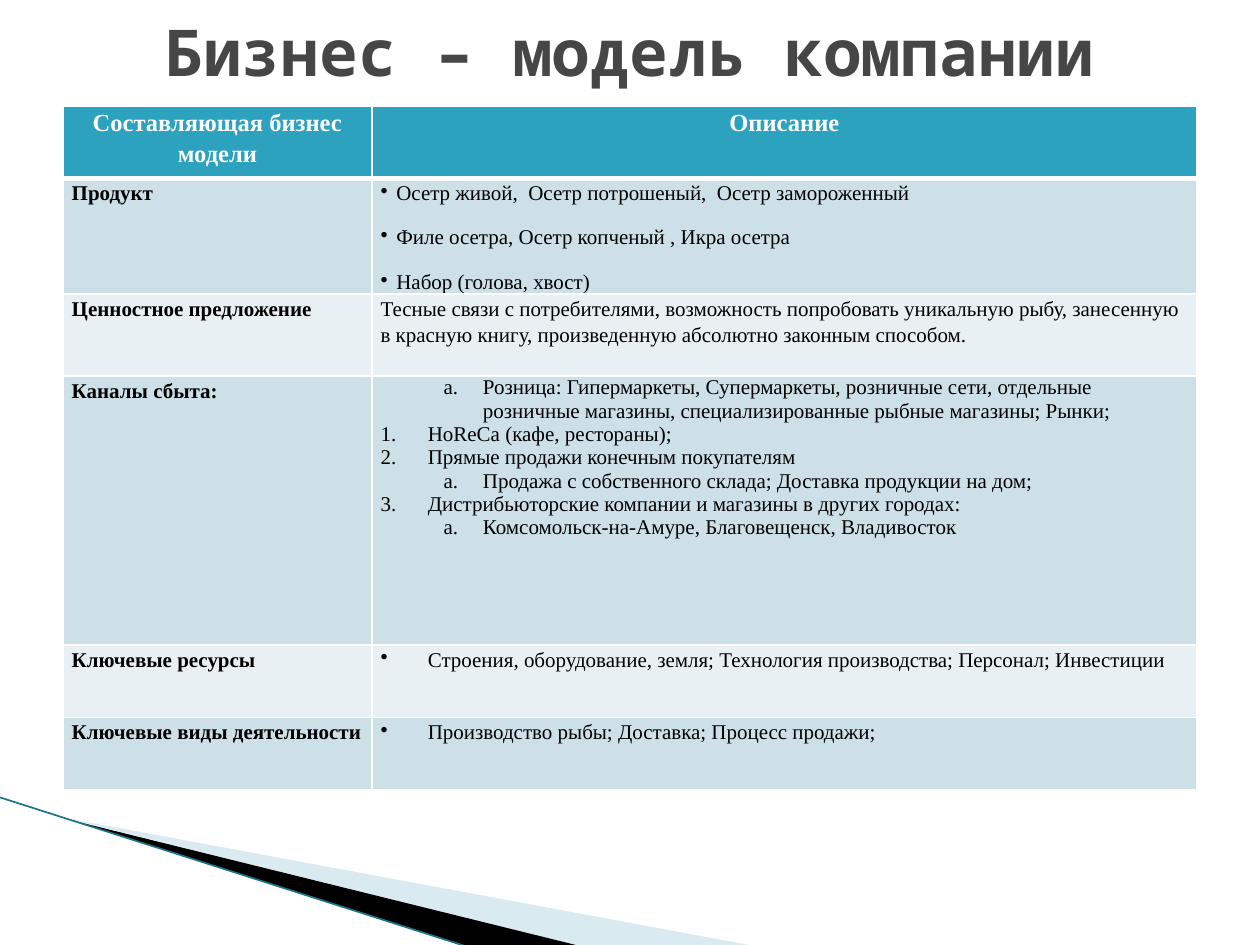
from dataclasses import dataclass

from lxml.etree import SubElement
from pptx import Presentation
from pptx.dml.color import RGBColor
from pptx.enum.shapes import MSO_CONNECTOR
from pptx.enum.text import MSO_ANCHOR, MSO_AUTO_SIZE, PP_ALIGN
from pptx.oxml.ns import qn
from pptx.util import Pt


@dataclass(frozen=True)
class Theme:
    title_font: str = "Noto Sans Mono"
    body_font: str = "Times New Roman"
    title_size: float = 36.9
    header_size: float = 14
    body_size: float = 12
    title: str = "464646"
    white: str = "FFFFFF"
    black: str = "000000"
    header: str = "2DA2BF"
    band_dark: str = "CDE0E8"
    band_light: str = "E8F0F4"
    wedge: str = "A0CBDC"
    edge: str = "1B7587"


@dataclass(frozen=True)
class ListStyle:
    tag: str
    attribute: str
    value: str
    left: float
    hanging: float
    level: int = 0
    line_spacing: float = 1.0
    space_after: float = 0


THEME = Theme()
PLAIN = None
PRODUCT = ListStyle("a:buChar", "char", "•", 9, 9, line_spacing=1.15, space_after=10)
BULLET = ListStyle("a:buChar", "char", "•", 27, 27, line_spacing=1.15)
NUMBER = ListStyle("a:buAutoNum", "type", "arabicPeriod", 27, 27)
LETTER = ListStyle("a:buAutoNum", "type", "alphaLcPeriod", 58.5, 22.5, level=1)

TITLE = "Бизнес – модель компании"
HEADERS = ("Составляющая бизнес модели", "Описание")
COLUMN_WIDTHS = (176.5, 471.5)
ROW_HEIGHTS = (41.5, 66, 47, 153.5, 41.5, 41.5)
ROWS = (
    ("Продукт", (
        (PRODUCT, "Осетр живой,  Осетр потрошеный,  Осетр замороженный"),
        (PRODUCT, "Филе осетра, Осетр копченый , Икра осетра"),
        (PRODUCT, "Набор (голова, хвост)"))),
    ("Ценностное предложение", (
        (PLAIN, "Тесные связи с потребителями, возможность попробовать уникальную рыбу, "
                "занесенную в красную книгу, произведенную абсолютно законным способом."),)),
    ("Каналы сбыта:", (
        (LETTER, "Розница: Гипермаркеты, Супермаркеты, розничные сети, отдельные розничные "
                 "магазины, специализированные рыбные магазины; Рынки;"),
        (NUMBER, "HoReCa (кафе, рестораны);"),
        (NUMBER, "Прямые продажи конечным покупателям"),
        (LETTER, "Продажа с собственного склада; Доставка продукции на дом;"),
        (NUMBER, "Дистрибьюторские компании и магазины в других городах:"),
        (LETTER, "Комсомольск-на-Амуре, Благовещенск, Владивосток"))),
    ("Ключевые ресурсы", (
        (BULLET, "Строения, оборудование, земля; Технология производства; Персонал; Инвестиции"),)),
    ("Ключевые виды деятельности", (
        (BULLET, "Производство рыбы; Доставка; Процесс продажи;"),)),
)


def color(value):
    return RGBColor.from_string(value)


def format_runs(paragraph, font_name, size, text_color, bold):
    for run in paragraph.runs:
        run.font.name = font_name
        run.font.size = Pt(size)
        run.font.bold = bold
        run.font.color.rgb = color(text_color)


def add_wedge(slide, points, fill_color, opacity=100):
    builder = slide.shapes.build_freeform(*points[0], scale=Pt(1))
    builder.add_line_segments(points[1:], close=True)
    shape = builder.convert_to_shape()
    shape.shadow.inherit = False
    shape.line.fill.background()
    shape.fill.solid()
    shape.fill.fore_color.rgb = color(fill_color)
    if opacity < 100:
        srgb = shape.fill._xPr.find(qn("a:solidFill")).find(qn("a:srgbClr"))
        SubElement(srgb, qn("a:alpha"), val=str(opacity * 1000))


def add_edge_line(slide, start, end):
    points = [Pt(value) for value in (*start, *end)]
    connector = slide.shapes.add_connector(MSO_CONNECTOR.STRAIGHT, *points)
    connector.line.color.rgb = color(THEME.edge)
    connector.line.width = Pt(0.95)
    SubElement(connector._element.spPr, qn("a:effectLst"))


def set_title(slide):
    title = slide.shapes.title
    title.left, title.top, title.width, title.height = Pt(36), Pt(9.5), Pt(648), Pt(39.5)
    frame = title.text_frame
    frame.text = TITLE
    frame.word_wrap = True
    frame.auto_size = MSO_AUTO_SIZE.NONE
    frame.vertical_anchor = MSO_ANCHOR.MIDDLE
    paragraph = frame.paragraphs[0]
    paragraph.alignment = PP_ALIGN.CENTER
    format_runs(paragraph, THEME.title_font, THEME.title_size, THEME.title, True)


def apply_list_style(paragraph, style):
    paragraph.level = style.level
    properties = paragraph._p.get_or_add_pPr()
    properties.set("marL", str(Pt(style.left)))
    properties.set("indent", str(-Pt(style.hanging)))
    SubElement(properties, qn(style.tag), {style.attribute: style.value})
    paragraph.line_spacing = style.line_spacing
    paragraph.space_after = Pt(style.space_after)


def style_cell(cell, fill_color, bottom_width=1):
    cell.margin_left = cell.margin_right = Pt(5)
    cell.margin_top = cell.margin_bottom = 0
    properties = cell._tc.get_or_add_tcPr()
    for side, width in (("L", 1), ("R", 1), ("T", 1), ("B", bottom_width)):
        border = SubElement(properties, qn(f"a:ln{side}"), w=str(Pt(width)))
        fill = SubElement(border, qn("a:solidFill"))
        SubElement(fill, qn("a:srgbClr"), val=THEME.white)
    cell.fill.solid()
    cell.fill.fore_color.rgb = color(fill_color)


def write_cell(cell, items, size, text_color, bold, alignment=PP_ALIGN.LEFT):
    frame = cell.text_frame
    for index, (style, text) in enumerate(items):
        paragraph = frame.add_paragraph() if index else frame.paragraphs[0]
        paragraph.text = text
        paragraph.alignment = alignment
        if style:
            apply_list_style(paragraph, style)
        else:
            paragraph.line_spacing = 1.15
            paragraph.space_after = Pt(10)
        format_runs(paragraph, THEME.body_font, size, text_color, bold)


def add_model_table(slide):
    table = slide.shapes.add_table(
        len(ROW_HEIGHTS), len(COLUMN_WIDTHS), Pt(36), Pt(60.5),
        Pt(sum(COLUMN_WIDTHS)), Pt(sum(ROW_HEIGHTS))).table
    for column, width in zip(table.columns, COLUMN_WIDTHS):
        column.width = Pt(width)
    for row, height in zip(table.rows, ROW_HEIGHTS):
        row.height = Pt(height)

    # Header row
    for cell, text in zip(table.rows[0].cells, HEADERS):
        style_cell(cell, THEME.header, bottom_width=3)
        write_cell(cell, [(PLAIN, text)], THEME.header_size, THEME.white, True, PP_ALIGN.CENTER)

    # Banded body rows
    for index, (name, items) in enumerate(ROWS):
        band = THEME.band_light if index % 2 else THEME.band_dark
        name_cell, description_cell = table.rows[index + 1].cells
        for cell in (name_cell, description_cell):
            style_cell(cell, band)
        write_cell(name_cell, [(PLAIN, name)], THEME.body_size, THEME.black, True)
        write_cell(description_cell, items, THEME.body_size, THEME.black, False)


def main():
    presentation = Presentation()
    presentation.slide_width, presentation.slide_height = Pt(720), Pt(540)
    slide = presentation.slides.add_slide(presentation.slide_layouts[5])

    # Corner decoration
    add_wedge(slide, [(39.5, 468.5), (428.5, 540.5), (328.5, 540.5), (39.5, 468)],
              THEME.wedge, opacity=40)
    add_wedge(slide, [(38, 467.5), (329, 540.5), (268, 541), (39, 468)], THEME.black)
    add_edge_line(slide, (-0.5, 455.5), (267, 541))

    # Content
    add_model_table(slide)
    set_title(slide)
    presentation.save("out.pptx")


if __name__ == "__main__":
    main()
